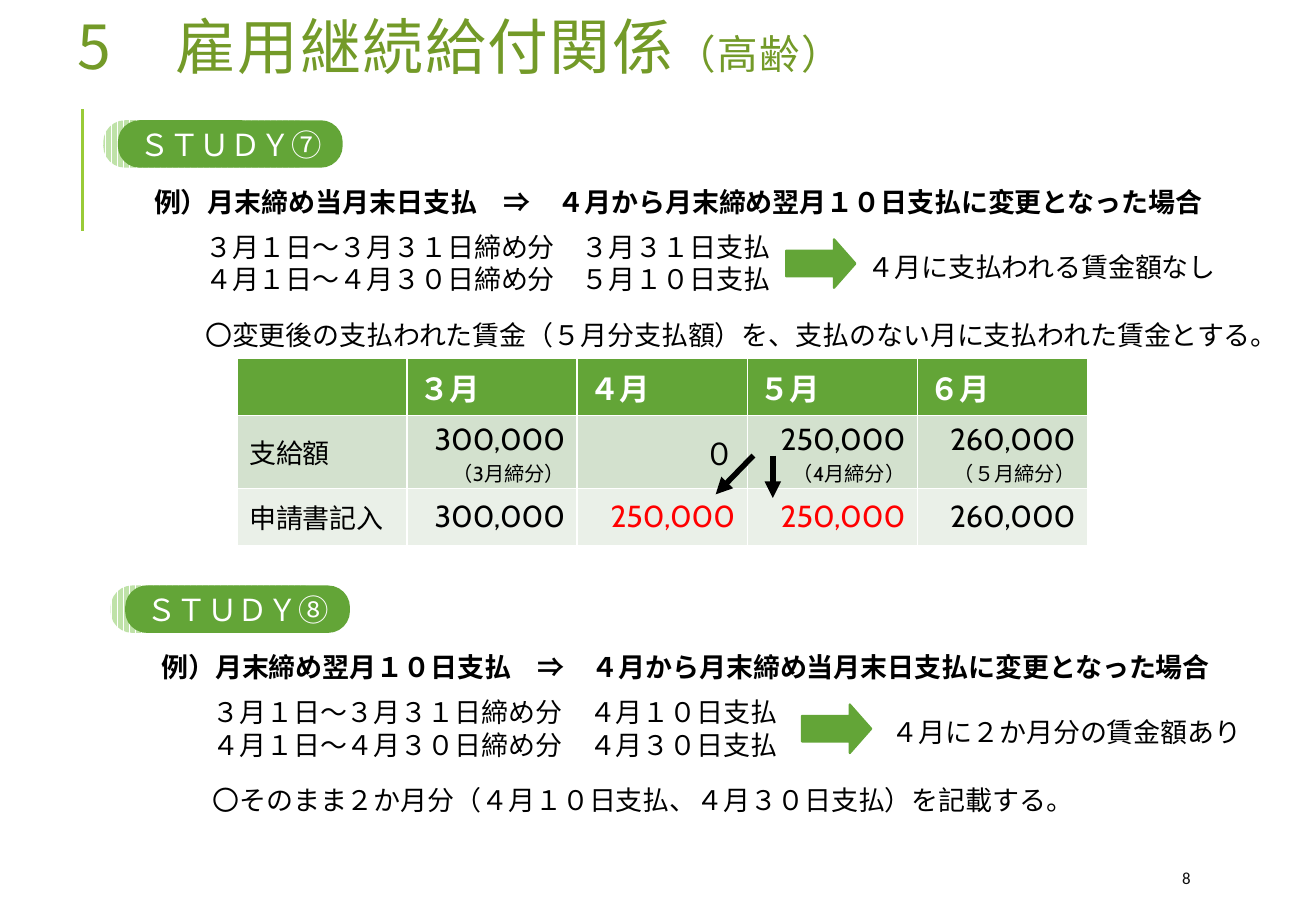
from pptx import Presentation
from pptx.dml.color import RGBColor
from pptx.enum.dml import MSO_PATTERN as Pattern
from pptx.enum.shapes import MSO_CONNECTOR as Line, MSO_SHAPE as Shape
from pptx.enum.text import MSO_ANCHOR as Anchor, PP_ALIGN as Align
from pptx.oxml.ns import qn
from pptx.util import Inches, Pt
from lxml.etree import SubElement

HUES = {"green": "63A537", "pale": "BFE2A8", "lime": "99CB38",
        "title": "739A28", "mint": "D3E1CE", "mist": "EAF0E8",
        "white": "FFFFFF", "black": "000000", "ink": "0D0D0D",
        "red": "FF0000"}


def hue(name):
    """Return a named colour."""
    return RGBColor.from_string(HUES[name])


def style(font, size, name="Cabin", color="black", bold=False):
    """Set the look of a font."""
    font.size, font.name, font.bold = Pt(size), name, bold
    font.color.rgb = hue(color)


def box(at):
    """Turn lengths in inches into slide lengths."""
    return [Inches(n) for n in at]


def label(slide, at, lines, size=16, name="Cabin", color="black", bold=False):
    """Add a text box with one paragraph a line."""
    frame = slide.shapes.add_textbox(*box(at)).text_frame
    frame.word_wrap = True
    frame.text = "\n".join(lines)
    for para in frame.paragraphs:
        style(para.font, size, name, color, bold)
    return frame


def stroke(slide, ends, color, width, arrow=False):
    """Add a straight line, with or without an arrowhead."""
    line = slide.shapes.add_connector(Line.STRAIGHT, *box(ends))
    line.line.color.rgb, line.line.width = hue(color), Pt(width)
    if arrow:
        SubElement(line.line._get_or_add_ln(), qn("a:tailEnd"), type="triangle")
    SubElement(line._element.spPr, qn("a:effectLst"))


def solid(shapes, kind, at, adjust):
    """Add a green preset shape."""
    shape = shapes.add_shape(kind, *box(at))
    for i, part in enumerate(adjust):
        shape.adjustments[i] = part
    shape.shadow.inherit = False
    shape.fill.solid()
    shape.fill.fore_color.rgb = hue("green")
    return shape


def badge(slide, left, top, text):
    """Add a rounded badge over its striped back."""
    shapes = slide.shapes.add_group_shape().shapes
    back = solid(shapes, Shape.ROUNDED_RECTANGLE, (left, top, 1.78, 0.39), [0.46])
    back.fill.patterned()
    back.fill.pattern = Pattern.DARK_VERTICAL
    back.fill.fore_color.rgb = hue("pale")
    back.fill.back_color.rgb = hue("white")
    face = solid(shapes, Shape.ROUNDED_RECTANGLE,
                 (left + 0.12, top, 1.85, 0.39), [0.46])
    for shape in (back, face):
        shape.line.fill.background()
    frame = face.text_frame
    frame.text, frame.word_wrap = text, False
    frame.vertical_anchor = Anchor.MIDDLE
    para = frame.paragraphs[0]
    para.alignment = Align.CENTER
    style(para.font, 18, "Arial", "white")


def study(slide, left, top, name, case, plan, arrow, result, note):
    """Add one study: badge, case, pay dates, arrow, result and note."""
    badge(slide, left, top, name)
    label(slide, (left + 0.32, top + 0.49, 9.67, 0.37), [case], bold=True)
    label(slide, (left + 0.74, top + 0.86, 5.04, 0.64), plan, name="Arial")
    shape = solid(slide.shapes, Shape.RIGHT_ARROW,
                  (left + arrow, top + 0.98, 0.57, 0.4), [0.53, 0.44])
    shape.line.color.rgb, shape.line.width = hue("green"), Pt(1.25)
    gap, text = result
    label(slide, (left + arrow + gap, top + 1.02, 3.23, 0.37), [text], name="Arial")
    label(slide, (left + 0.74, top + 1.58, 8.94, 0.37), [note])


def heading(slide, at):
    """Fill and place the title."""
    title = slide.shapes.title
    title.left, title.top, title.width, title.height = box(at)
    frame = title.text_frame
    frame.vertical_anchor = Anchor.MIDDLE
    para = frame.paragraphs[0]
    para.alignment, para.line_spacing = Align.LEFT, 0.8
    for text, size in (("5　雇用継続給付関係", 36), ("（高齢）", 24)):
        run = para.add_run()
        run.text = text
        style(run.font, size, "Noto Sans CJK JP", "title")
        run.font._element.set("spc", "100")


def wages(slide, left, top):
    """Add the wage table and the arrows between its rows."""
    rows = [
        ("green", 0.47, ["", "３月", "４月", "５月", "６月"]),
        ("mint", 0.6, ["支給額", "300,000\n|（3月締分）", "０",
                       "250,000|（4月締分）", "260,000|（５月締分）"]),
        ("mist", 0.47, ["申請書記入", "300,000", "250,000", "250,000", "260,000"]),
    ]
    grid = slide.shapes.add_table(3, 5, *box((left, top, 7, 1.54))).table
    for r, (fill, height, texts) in enumerate(rows):
        grid.rows[r].height = Inches(height)
        for c, text in enumerate(texts):
            cell = grid.cell(r, c)
            cell.fill.solid()
            cell.fill.fore_color.rgb = hue(fill)
            cell.vertical_anchor = Anchor.MIDDLE
            color = "white" if r == 0 else "red" if r == 2 and c in (2, 3) else "black"
            main, _, month = text.partition("|")
            cell.text = main
            for para in cell.text_frame.paragraphs:
                para.alignment = Align.RIGHT if r and c else Align.LEFT
                style(para.font, 16 if r and c == 0 else 18,
                      color=color, bold=r == 0)
            if month:
                run = para.add_run()
                run.text = month
                run.font.size = Pt(12)
    stroke(slide, (left + 4.25, top + 0.8, left + 3.94, top + 1.12), "black", 3.25, True)
    stroke(slide, (left + 4.41, top + 0.8, left + 4.41, top + 1.15), "black", 3.25, True)


def main():
    """Build the slide and save it."""
    deck = Presentation()
    deck.slide_width, deck.slide_height = Inches(10.83), Inches(7.5)
    slide = deck.slides.add_slide(deck.slide_layouts[5])
    stroke(slide, (0.68, 1.9, 0.68, 0.9), "lime", 1.5)
    heading(slide, (0.54, 0, 9.6, 0.85))
    study(slide, 0.85, 0.99, "ＳＴＵＤＹ⑦",
          "例）月末締め当月末日支払　⇒　４月から月末締め翌月１０日支払に変更となった場合",
          ["３月１日～３月３１日締め分　３月３１日支払",
           "４月１日～４月３０日締め分　５月１０日支払"],
          5.62, (0.57, "４月に支払われる賃金額なし"),
          "〇変更後の支払われた賃金（５月分支払額）を、支払のない月に支払われた賃金とする。")
    wages(slide, 1.95, 2.95)
    study(slide, 0.91, 4.82, "ＳＴＵＤＹ⑧",
          "例）月末締め翌月１０日支払　⇒　４月から月末締め当月末日支払に変更となった場合",
          ["３月１日～３月３１日締め分　４月１０日支払",
           "４月１日～４月３０日締め分　４月３０日支払"],
          5.69, (0.64, "４月に２か月分の賃金額あり"),
          "〇そのまま２か月分（４月１０日支払、４月３０日支払）を記載する。")
    page = label(slide, (9.63, 7.08, 0.87, 0.3), ["8"], 10, "Calibri", "ink")
    page.vertical_anchor = Anchor.MIDDLE
    deck.save("out.pptx")


if __name__ == "__main__":
    main()
